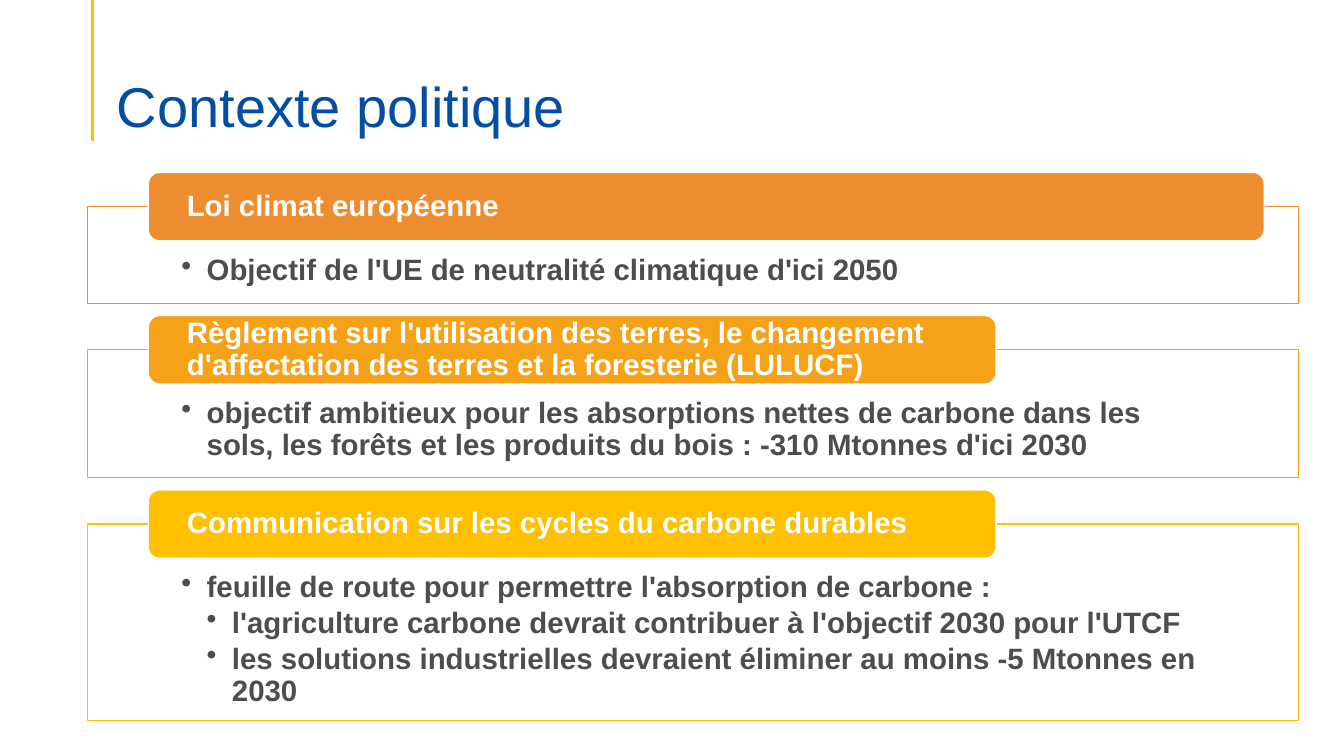
from dataclasses import dataclass

from lxml import etree
from pptx import Presentation
from pptx.dml.color import RGBColor
from pptx.enum.shapes import MSO_CONNECTOR, MSO_SHAPE
from pptx.enum.text import MSO_ANCHOR, MSO_AUTO_SIZE, PP_ALIGN
from pptx.oxml.ns import qn
from pptx.util import Emu, Pt

RECT, ROUND = MSO_SHAPE.RECTANGLE, MSO_SHAPE.ROUNDED_RECTANGLE
STRAIGHT = MSO_CONNECTOR.STRAIGHT
TOP, MIDDLE, BOTTOM = MSO_ANCHOR.TOP, MSO_ANCHOR.MIDDLE, MSO_ANCHOR.BOTTOM
LEFT = PP_ALIGN.LEFT
NO_FIT = MSO_AUTO_SIZE.NONE
SCALE = 9144  # EMU per px, 100 px to the inch


@dataclass(frozen=True)
class Theme:
    font: str = "Arial"
    blue: str = "034EA2"
    gold: str = "FFC000"
    amber: str = "F5A218"
    orange: str = "ED8D2F"
    gray: str = "4D4D4D"
    white: str = "FFFFFF"
    title: int = 40
    text: int = 21


THEME = Theme()
BOX_LEFT, BOX_WIDTH, BOX_TOP, BOX_GAP = 87, 1201, 205, 46
TAB_LEFT, TAB_RISE, TAB_HEIGHT = 147, 34, 68
INDENT = 25

# heading, tab width, box height, colour, (level, line) pairs
PANELS = [
    ("Loi climat européenne", 1107, 96, THEME.orange,
     [(1, "Objectif de l'UE de neutralité climatique d'ici 2050")]),
    ("Règlement sur l'utilisation des terres, le changement "
     "d'affectation des terres et la foresterie (LULUCF)", 841, 127, THEME.amber,
     [(1, "objectif ambitieux pour les absorptions nettes de carbone dans les "
          "sols, les forêts et les produits du bois : -310 Mtonnes d'ici 2030")]),
    ("Communication sur les cycles du carbone durables", 841, 195, THEME.gold,
     [(1, "feuille de route pour permettre l'absorption de carbone :"),
      (2, "l'agriculture carbone devrait contribuer à l'objectif 2030 pour l'UTCF"),
      (2, "les solutions industrielles devraient éliminer au moins -5 Mtonnes en 2030")]),
]


def px(count):
    return Emu(count * SCALE)


def rgb(code):
    return RGBColor.from_string(code)


def apply(item, values):
    for name, value in values.items():
        setattr(item, name, value)


def set_frame(frame, anchor, left, top, right, bottom):
    apply(frame, {
        "word_wrap": True, "auto_size": NO_FIT, "vertical_anchor": anchor,
        "margin_left": px(left), "margin_top": px(top),
        "margin_right": px(right), "margin_bottom": px(bottom),
    })


def set_text(para, text, size, color, bold=False):
    para.text = text
    apply(para, {"alignment": LEFT, "line_spacing": 0.9})
    apply(para.font, {"name": THEME.font, "size": Pt(size), "bold": bold})
    para.font.color.rgb = rgb(color)


def add_bullet(para, level):
    props = para._p.get_or_add_pPr()
    props.set("marL", str(px(INDENT * level)))
    props.set("indent", str(px(-INDENT)))
    etree.SubElement(props, qn("a:buChar"), char="•")
    para.level = level


def add_block(slide, kind, box, fill, line):
    shape = slide.shapes.add_shape(kind, *map(px, box))
    shape.shadow.inherit = False
    shape.fill.solid()
    shape.fill.fore_color.rgb = rgb(fill)
    shape.line.color.rgb = rgb(line)
    shape.line.width = Pt(1)
    return shape


def add_list(slide, top, height, color, lines):
    box = (BOX_LEFT, top, BOX_WIDTH, height)
    shape = add_block(slide, RECT, box, THEME.white, color)
    tint = shape.fill._xPr.find(".//" + qn("a:srgbClr"))
    etree.SubElement(tint, qn("a:alpha"), val="90000")
    frame = shape.text_frame
    set_frame(frame, TOP, 93, 48, 93, 16)
    for index, (level, text) in enumerate(lines):
        para = frame.add_paragraph() if index else frame.paragraphs[0]
        add_bullet(para, level)
        set_text(para, text, THEME.text, THEME.gray, True)
        para.space_after = Pt(3)


def add_tab(slide, top, width, color, text):
    box = (TAB_LEFT, top, width, TAB_HEIGHT)
    shape = add_block(slide, ROUND, box, color, THEME.white)
    set_frame(shape.text_frame, MIDDLE, 35, 0, 35, 0)
    set_text(shape.text_frame.paragraphs[0], text, THEME.text, THEME.white, True)


def add_rule(slide):
    rule = slide.shapes.add_connector(STRAIGHT, px(92), px(0), px(92), px(140))
    rule.line.color.rgb = rgb(THEME.gold)
    rule.line.width = Pt(2.25)
    etree.SubElement(rule._element.spPr, qn("a:effectLst"))


def set_title(slide, text):
    title = slide.shapes.title
    apply(title, {"left": px(106), "top": px(53),
                  "width": px(1150), "height": px(86)})
    set_frame(title.text_frame, BOTTOM, 10, 5, 10, 0)
    set_text(title.text_frame.paragraphs[0], text, THEME.title, THEME.blue)


def main():
    deck = Presentation()
    apply(deck, {"slide_width": px(1333), "slide_height": px(750)})
    slide = deck.slides.add_slide(deck.slide_layouts[5])
    add_rule(slide)
    set_title(slide, "Contexte politique")
    top = BOX_TOP
    for heading, width, height, color, lines in PANELS:
        add_list(slide, top, height, color, lines)
        add_tab(slide, top - TAB_RISE, width, color, heading)
        top += height + BOX_GAP
    deck.save("out.pptx")


if __name__ == "__main__":
    main()
